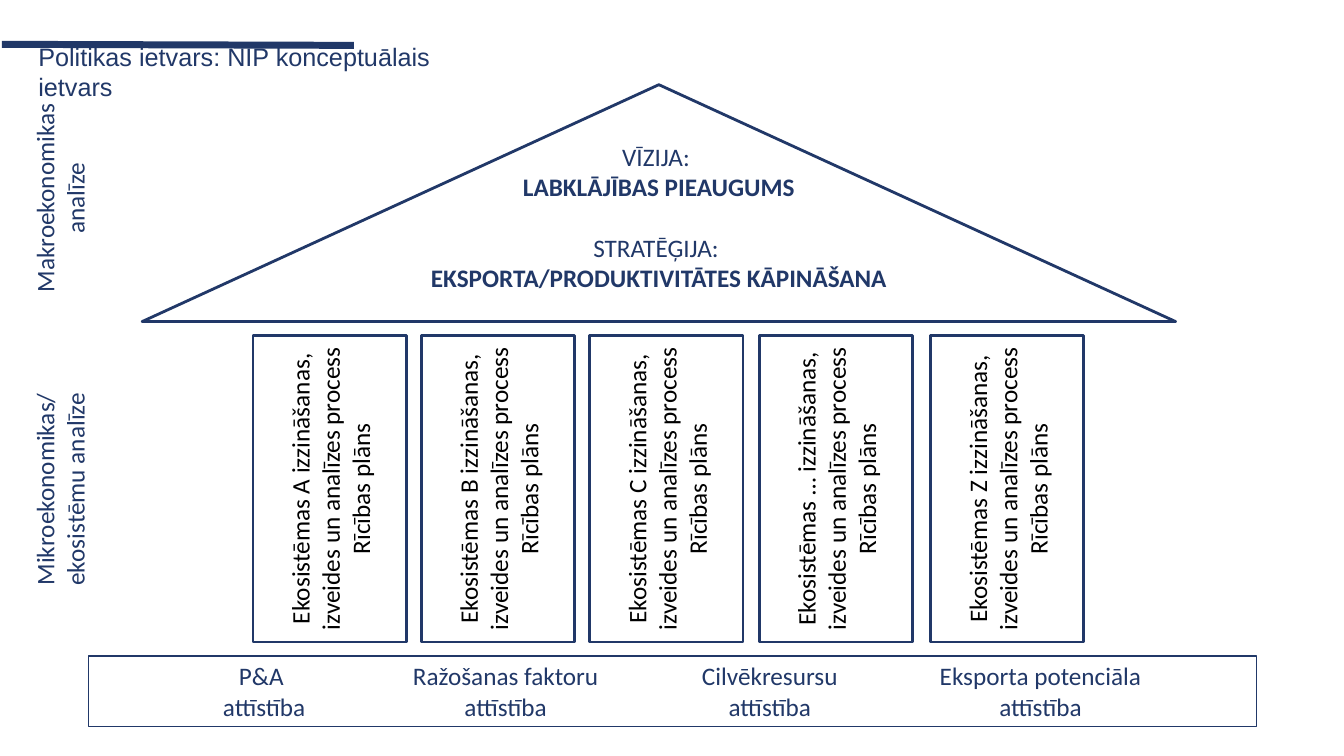
"""Build the slide showing the conceptual framework of the national industrial policy as a house."""
import lxml.etree
import pptx
import pptx.dml.color
import pptx.enum.shapes
import pptx.enum.text
import pptx.oxml.ns
import pptx.util

Inches = pptx.util.Inches
Pt = pptx.util.Pt
SHAPE = pptx.enum.shapes.MSO_SHAPE
ALIGN = pptx.enum.text.PP_ALIGN
ANCHOR = pptx.enum.text.MSO_ANCHOR
NAVY = pptx.dml.color.RGBColor(0x21, 0x38, 0x68)
WHITE = pptx.dml.color.RGBColor(0xFF, 0xFF, 0xFF)
BLACK = pptx.dml.color.RGBColor(0, 0, 0)
qn = pptx.oxml.ns.qn

deck = pptx.Presentation()
deck.slide_width = Inches(13.33)
deck.slide_height = Inches(7.5)
slide = deck.slides.add_slide(deck.slide_layouts[6])


def write(shape, lines, color=NAVY, font="Calibri", align=ALIGN.CENTER, anchor=ANCHOR.MIDDLE):
    """Fill a shape with 18 pt paragraphs and return its text frame."""
    frame = shape.text_frame
    frame.word_wrap = True
    frame.vertical_anchor = anchor
    frame.text = "\n".join(lines)
    for para in frame.paragraphs:
        para.alignment = align
        for name, value in {"name": font, "size": Pt(18), "bold": False}.items():
            setattr(para.font, name, value)
        para.font.color.rgb = color
    return frame


def add_panel(kind, left, top, width, height, line_width):
    """Add a translucent white shape with a navy outline."""
    panel = slide.shapes.add_shape(kind, Inches(left), Inches(top), Inches(width), Inches(height))
    panel.shadow.inherit = False
    panel.fill.solid()
    panel.fill.fore_color.rgb = WHITE
    fill_color = panel.fill._xPr.find(qn("a:solidFill"))[0]
    lxml.etree.SubElement(fill_color, qn("a:alpha"), val="71000")
    panel.line.color.rgb = NAVY
    panel.line.width = Pt(line_width)
    return panel


title = slide.shapes.add_textbox(Inches(0.35), Inches(0.53), Inches(4.58), Inches(0.36))
frame = write(title, ["Politikas ietvars: NIP konceptuālais ietvars"], font="Arial", align=ALIGN.LEFT)
for side in ("left", "top", "right", "bottom"):
    setattr(frame, f"margin_{side}", Inches(0.03))

rule = slide.shapes.add_connector(
    pptx.enum.shapes.MSO_CONNECTOR.STRAIGHT, Inches(0.02), Inches(0.44), Inches(3.51), Inches(0.45))
rule.line.color.rgb = NAVY
rule.line.width = Pt(5)
lxml.etree.SubElement(rule._element.spPr, qn("a:effectLst"))

roof = add_panel(SHAPE.ISOSCELES_TRIANGLE, 1.41, 0.84, 10.25, 2.35, 2)
frame = write(roof, ["VĪZIJA: ", "LABKLĀJĪBAS PIEAUGUMS",
                     "STRATĒĢIJA: ", "EKSPORTA/PRODUKTIVITĀTES KĀPINĀŠANA"])
frame.margin_bottom = Inches(0.95)
frame.paragraphs[2].space_before = Pt(22)
for para in frame.paragraphs[1::2]:
    para.font.bold = True

for letter, left in zip("ABC…Z", (2.51, 4.18, 5.85, 7.53, 9.23)):
    pillar = add_panel(SHAPE.RECTANGLE, left, 3.33, 1.52, 3.04, 2)
    frame = write(pillar, [f"Ekosistēmas {letter} izzināšanas, izveides un analīzes process",
                           "Rīcības plāns"], color=BLACK)
    frame._txBody.bodyPr.set("vert", "vert270")

add_panel(SHAPE.RECTANGLE, 0.88, 6.51, 11.58, 0.7, 1)
foundations = [
    (1.69, 1.86, ["P&A ", "attīstība"]),
    (3.92, 2.19, ["Ražošanas faktoru attīstība"]),
    (6.54, 2.19, ["Cilvēkresursu attīstība"]),
    (9.05, 2.54, ["Eksporta potenciāla attīstība"]),
]
for left, width, lines in foundations:
    foundation = slide.shapes.add_shape(
        SHAPE.FLOWCHART_ALTERNATE_PROCESS, Inches(left), Inches(6.6), Inches(width), Inches(0.51))
    foundation.shadow.inherit = False
    foundation.fill.background()
    foundation.line.fill.background()
    write(foundation, lines)

for top, label in ((1.61, "Makroekonomikas analīze"), (4.5, "Mikroekonomikas/ ekosistēmu analīze")):
    box = slide.shapes.add_textbox(Inches(-0.53), Inches(top), Inches(2.25), Inches(0.71))
    box.rotation = 270
    write(box, [label], anchor=ANCHOR.TOP)

deck.save("out.pptx")
